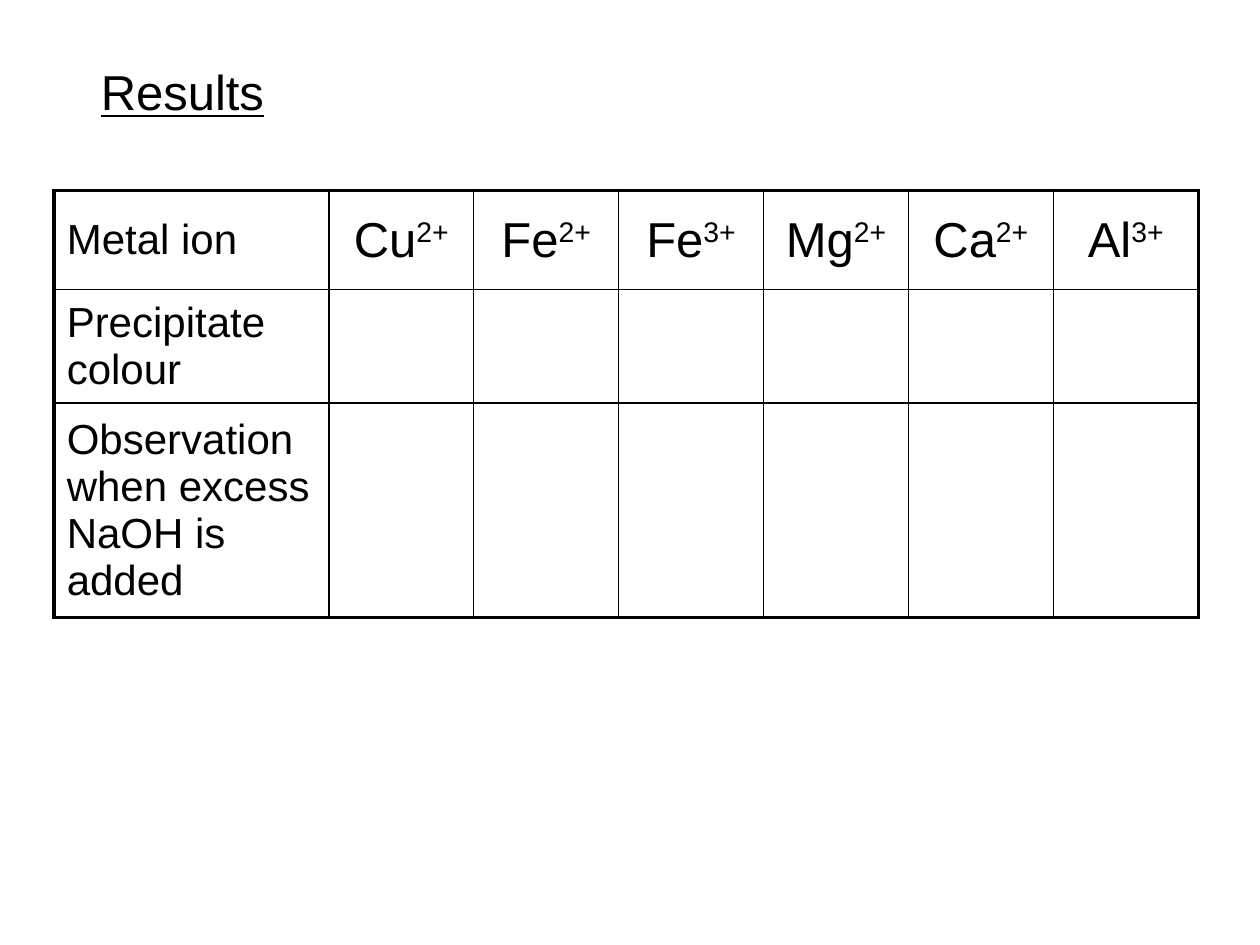
"""Build a results slide with a blank table of metal ion tests."""
import pptx
import pptx.dml.color
import pptx.enum.text
import pptx.util
from lxml import etree
from pptx.oxml.ns import qn

Inches, Pt = pptx.util.Inches, pptx.util.Pt
PP_ALIGN, MSO_ANCHOR = pptx.enum.text.PP_ALIGN, pptx.enum.text.MSO_ANCHOR
BLACK = "000000"


def style_font(font, size, colour):
    font.name = "Arial"
    font.size = Pt(size)
    font.bold = False
    font.color.rgb = pptx.dml.color.RGBColor.from_string(colour)


def add_border(cell, side, width, colour):
    line = etree.SubElement(cell._tc.get_or_add_tcPr(), qn(f"a:ln{side}"), w=str(Pt(width)))
    fill = etree.SubElement(line, qn("a:solidFill"))
    etree.SubElement(fill, qn("a:srgbClr"), val=colour)


presentation = pptx.Presentation()
presentation.slide_width, presentation.slide_height = Inches(10), Inches(7.5)
slide = presentation.slides.add_slide(presentation.slide_layouts[5])

heading = slide.shapes.title
heading.left, heading.top = Inches(0.7), Inches(0.44)
heading.width, heading.height = Inches(1.51), Inches(0.57)
heading.text_frame.text = "Results"
heading.text_frame.word_wrap = False
heading.text_frame.auto_size = pptx.enum.text.MSO_AUTO_SIZE.SHAPE_TO_FIT_TEXT
heading.text_frame.vertical_anchor = MSO_ANCHOR.TOP
heading_line = heading.text_frame.paragraphs[0]
heading_line.alignment = PP_ALIGN.LEFT
style_font(heading_line.font, 28, BLACK)
heading_line.font.underline = True

ions = [("Cu", "2+"), ("Fe", "2+"), ("Fe", "3+"), ("Mg", "2+"), ("Ca", "2+"), ("Al", "3+")]
row_labels = ["Metal ion", "Precipitate colour", "Observation when excess NaOH is added"]
row_heights = [0.79, 0.89, 1.63]
column_widths = [2.18] + [1.15] * len(ions)
last_row, last_column = len(row_labels) - 1, len(ions)

results = slide.shapes.add_table(
    len(row_labels), len(column_widths), Inches(0.43), Inches(1.51),
    Inches(sum(column_widths)), Inches(sum(row_heights))).table
results.first_row = False
results.horz_banding = False
for column, width in zip(results.columns, column_widths):
    column.width = Inches(width)

for r, (label, height) in enumerate(zip(row_labels, row_heights)):
    results.rows[r].height = Inches(height)
    for c, cell in enumerate(results.rows[r].cells):
        outer_sides = {"L": c == 0, "R": c == last_column, "T": r == 0, "B": r == last_row}
        for side, is_outer in outer_sides.items():
            add_border(cell, side, 2.25 if is_outer else 1, BLACK)
        cell.fill.background()
        cell.vertical_anchor = MSO_ANCHOR.MIDDLE
    label_cell = results.cell(r, 0)
    label_cell.text = label
    style_font(label_cell.text_frame.paragraphs[0].font, 24, BLACK)

for c, (symbol, charge) in enumerate(ions, start=1):
    ion = results.cell(0, c).text_frame.paragraphs[0]
    ion.alignment = PP_ALIGN.CENTER
    style_font(ion.font, 28, BLACK)
    ion.add_run().text = symbol
    superscript = ion.add_run()
    superscript.text = charge
    superscript._r.get_or_add_rPr().set("baseline", "30000")

presentation.save("out.pptx")
